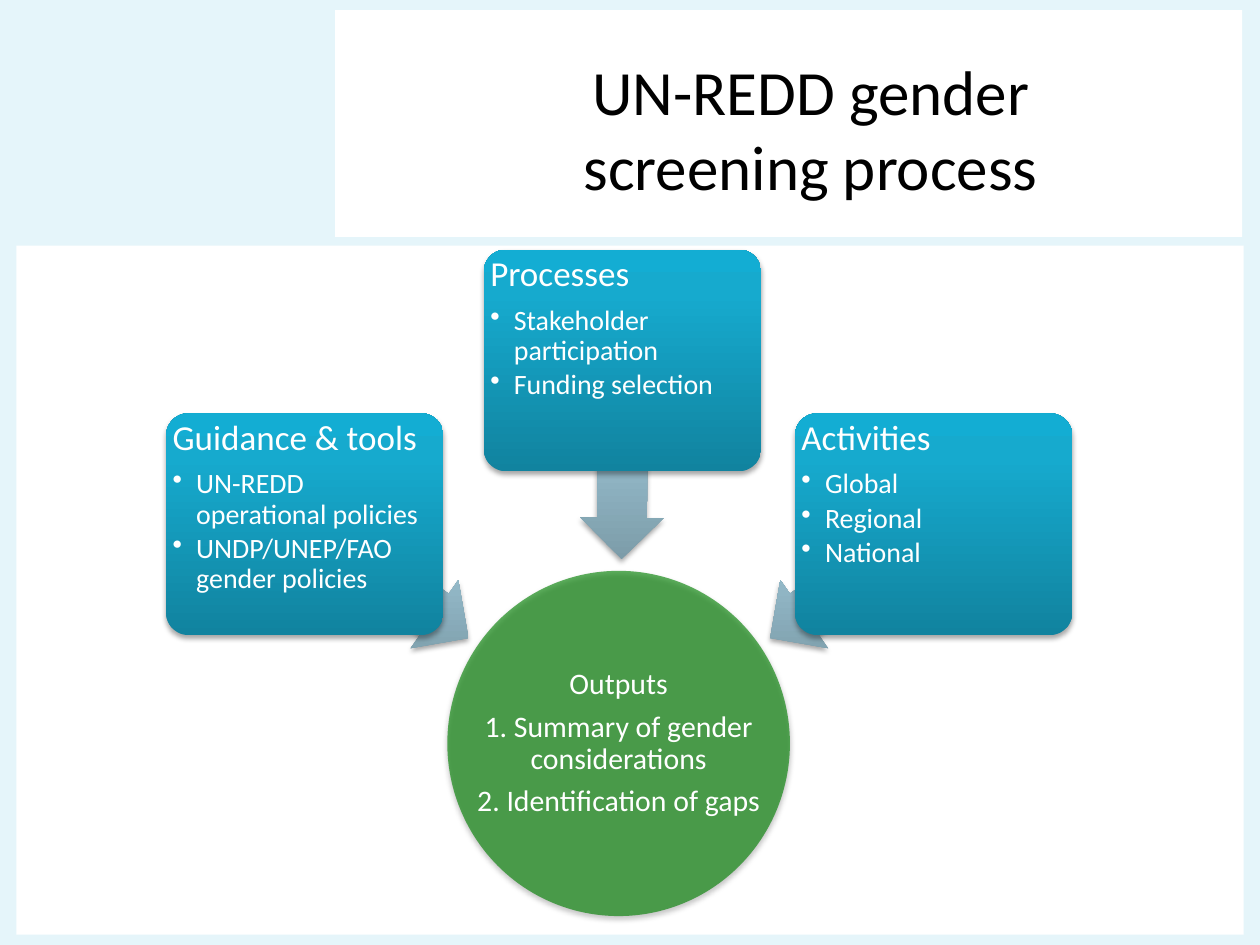
from copy import deepcopy
from dataclasses import dataclass

from lxml import etree
from pptx import Presentation
from pptx.dml.color import RGBColor
from pptx.enum.shapes import MSO_SHAPE
from pptx.enum.text import MSO_ANCHOR, PP_ALIGN
from pptx.oxml import parse_xml
from pptx.oxml.ns import qn
from pptx.shapes.autoshape import Shape
from pptx.slide import Slide
from pptx.text.text import TextFrame, _Paragraph
from pptx.util import Pt

RECT, ROUND = MSO_SHAPE.RECTANGLE, MSO_SHAPE.ROUNDED_RECTANGLE
OVAL, ARROW = MSO_SHAPE.OVAL, MSO_SHAPE.LEFT_ARROW
LEFT, CENTER = PP_ALIGN.LEFT, PP_ALIGN.CENTER
TOP, MIDDLE = MSO_ANCHOR.TOP, MSO_ANCHOR.MIDDLE

FONT = "Calibri"
COLORS = {"back": "E5F5FA", "white": "FFFFFF", "black": "000000", "green": "008000"}
BLUE = ((0, "11839F"), (0.8, "16AACE"), (1, "13ADD3"))
GRAY = ((0, "7C9CA9"), (0.8, "A1CADB"), (1, "A1CCDE"))
SHADOW = (
    '<a:outerShdw xmlns:a="http://schemas.openxmlformats.org/drawingml/2006/main" '
    'blurRad="39370" dist="22860" dir="5400000" rotWithShape="0">'
    '<a:srgbClr val="000000"><a:alpha val="35000"/></a:srgbClr></a:outerShdw>'
)


@dataclass
class Box:
    left: float
    top: float
    width: float
    height: float

    def lengths(self) -> tuple[Pt, ...]:
        return Pt(self.left), Pt(self.top), Pt(self.width), Pt(self.height)


@dataclass
class Input:
    box: Box
    arrow: Box
    turn: float
    head: str
    items: list[str]


CARD = (158.4, 126.7)
SHAFT = (113.8, 47.5)
INPUTS = [
    Input(Box(95, 236.2, *CARD), Box(164.2, 308.2, *SHAFT), 215, "Guidance & tools",
          ["UN-REDD operational policies", "UNDP/UNEP/FAO gender policies"]),
    Input(Box(276.5, 142.6, *CARD), Box(298.8, 239, *SHAFT), 270.5, "Processes",
          ["Stakeholder participation", "Funding selection"]),
    Input(Box(454.3, 236.2, *CARD), Box(429.8, 308.2, *SHAFT), 325, "Activities",
          ["Global", "Regional", "National"]),
]
PANELS = [Box(9.4, 140.4, 701.3, 393.8), Box(191.5, 5.8, 518.4, 129.6)]
TITLE = Box(187.2, 28, 552.2, 90)
CIRCLE = Box(255.6, 326.2, 195.8, 197.3)
OUTPUTS = ["Outputs", "1. Summary of gender considerations", "2. Identification of gaps"]


def rgb(name: str) -> RGBColor:
    return RGBColor.from_string(COLORS[name])


def add_plain(slide: Slide, kind: int, box: Box) -> Shape:
    """Add a shape without outline or theme shadow."""
    shape = slide.shapes.add_shape(kind, *box.lengths())
    shape.shadow.inherit = False
    shape.line.fill.background()
    return shape


def fill_flat(shape: Shape, name: str) -> None:
    shape.fill.solid()
    shape.fill.fore_color.rgb = rgb(name)


def fill_fade(shape: Shape, stops: tuple) -> None:
    """Fill from bottom to top, whatever the turn of the shape."""
    shape.fill.gradient()
    shape.fill.gradient_angle = 90
    grad = shape._element.spPr.find(qn("a:gradFill"))
    grad.set("rotWithShape", "0")
    group = grad.find(qn("a:gsLst"))
    group.append(deepcopy(group[-1]))
    for stop, (place, color) in zip(shape.fill.gradient_stops, stops):
        stop.position = place
        stop.color.rgb = RGBColor.from_string(color)


def add_shadow(shape: Shape) -> None:
    shape._element.spPr.find(qn("a:effectLst")).append(parse_xml(SHADOW))


def set_frame(frame: TextFrame, anchor: int, margin: float) -> None:
    frame.word_wrap = True
    frame.vertical_anchor = anchor
    frame.margin_left = frame.margin_right = Pt(margin)
    frame.margin_top = frame.margin_bottom = Pt(margin)


def set_font(para: _Paragraph, size: float, name: str) -> None:
    para.font.name = FONT
    para.font.size = Pt(size)
    para.font.color.rgb = rgb(name)


def add_line(frame: TextFrame, text: str, size: float, after: float,
             align: int = LEFT, bullet: bool = False) -> None:
    """Write the next paragraph, using the empty first one if there is no text."""
    para = frame.add_paragraph() if frame.text else frame.paragraphs[0]
    para.text = text
    para.alignment = align
    para.line_spacing = 0.9
    para.space_after = Pt(after)
    if bullet:
        para.level = 1
        props = para._p.get_or_add_pPr()
        props.set("marL", str(Pt(13.5)))
        props.set("indent", str(Pt(-13.5)))
        etree.SubElement(props, qn("a:buChar")).set("char", "•")
    set_font(para, size, "white")


def add_title(slide: Slide) -> None:
    frame = slide.shapes.add_textbox(*TITLE.lengths()).text_frame
    set_frame(frame, MIDDLE, 0)
    para = frame.paragraphs[0]
    para.text = "UN-REDD gender\vscreening process"
    para.alignment = CENTER
    set_font(para, 36, "black")


def add_circle(slide: Slide) -> None:
    disk = add_plain(slide, OVAL, CIRCLE)
    fill_flat(disk, "green")
    color = disk._element.spPr.find(qn("a:solidFill"))[0]
    etree.SubElement(color, qn("a:alpha")).set("val", "63000")
    add_shadow(disk)
    frame = slide.shapes.add_textbox(*CIRCLE.lengths()).text_frame
    set_frame(frame, MIDDLE, 0.7)
    for text in OUTPUTS:
        add_line(frame, text, 17, 6, CENTER)


def add_input(slide: Slide, item: Input) -> None:
    arrow = add_plain(slide, ARROW, item.arrow)
    arrow.adjustments[0], arrow.adjustments[1] = 0.6, 0.5
    arrow.rotation = item.turn
    fill_fade(arrow, GRAY)
    add_shadow(arrow)

    card = add_plain(slide, ROUND, item.box)
    card.adjustments[0] = 0.1
    fill_fade(card, BLUE)
    add_shadow(card)
    frame = card.text_frame
    set_frame(frame, TOP, 0)
    add_line(frame, item.head, 20, 7)
    for text in item.items:
        add_line(frame, text, 16, 2.4, bullet=True)


def main() -> None:
    deck = Presentation()
    deck.slide_width, deck.slide_height = Pt(720), Pt(540)
    slide = deck.slides.add_slide(deck.slide_layouts[6])
    slide.background.fill.solid()
    slide.background.fill.fore_color.rgb = rgb("back")
    for panel in PANELS:
        fill_flat(add_plain(slide, RECT, panel), "white")
    add_title(slide)
    add_circle(slide)
    for item in INPUTS:
        add_input(slide, item)
    deck.save("out.pptx")


if __name__ == "__main__":
    main()
